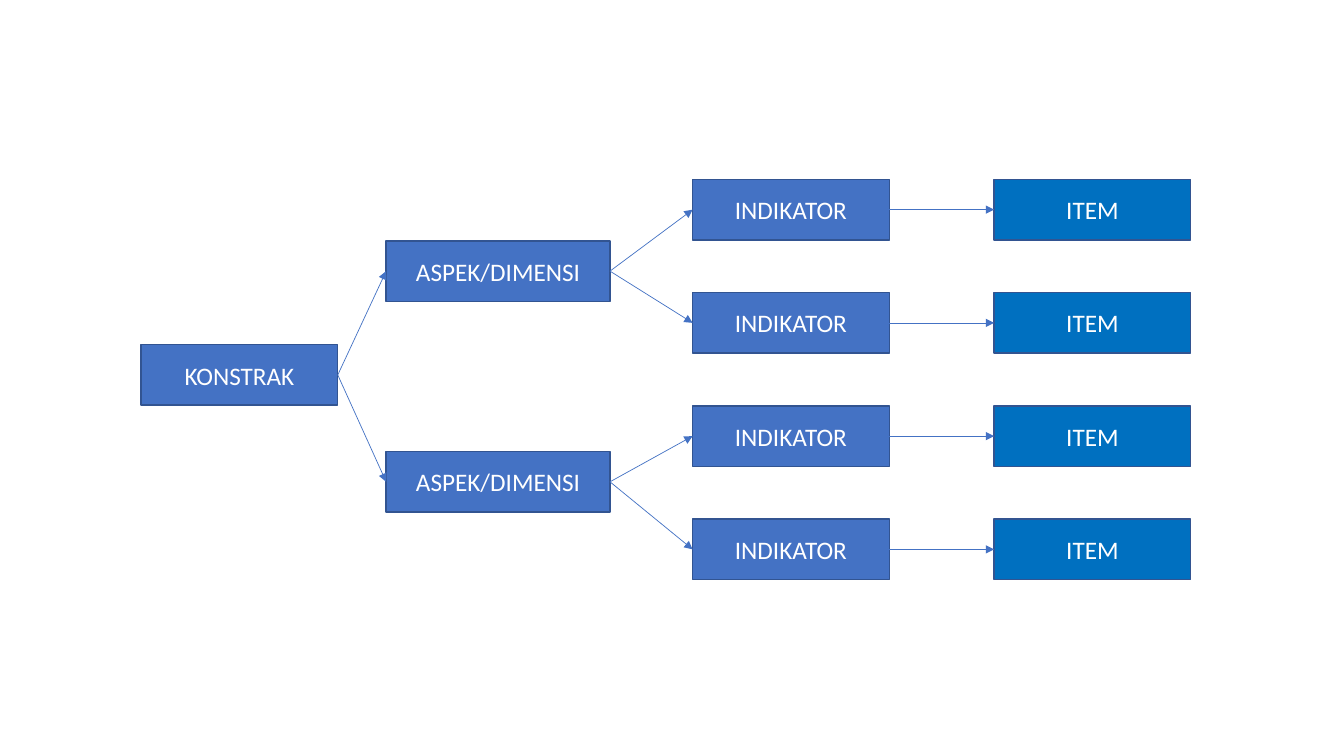
from dataclasses import dataclass

from lxml import etree
from pptx import Presentation
from pptx.dml.color import RGBColor
from pptx.enum import shapes, text
from pptx.oxml import ns
from pptx.util import Inches, Pt


@dataclass(frozen=True)
class Theme:
    font: str = "Calibri"
    size: float = 18
    fill: str = "4472C4"
    item_fill: str = "0070C0"
    outline: str = "325491"
    ink: str = "FFFFFF"
    arrow: str = "4472C4"
    outline_width: float = 1
    arrow_width: float = 0.5


THEME = Theme()
NODE_W, ASPECT_W, NODE_H = 1.95, 2.22, 0.6
LEFT_SITE, RIGHT_SITE = 1, 3


def add_text(sp, words, size=THEME.size, color=THEME.ink, font=THEME.font):
    tf = sp.text_frame
    tf.word_wrap = True
    tf.vertical_anchor = text.MSO_ANCHOR.MIDDLE
    p = tf.paragraphs[0]
    p.alignment = text.PP_ALIGN.CENTER
    r = p.add_run()
    r.text = words
    r.font.name = font
    r.font.size = Pt(size)
    r.font.color.rgb = RGBColor.from_string(color)


def add_node(s, words, x, y, w=NODE_W, fill=THEME.fill):
    sp = s.shapes.add_shape(shapes.MSO_SHAPE.RECTANGLE,
                            Inches(x), Inches(y), Inches(w), Inches(NODE_H))
    sp.shadow.inherit = False
    sp.fill.solid()
    sp.fill.fore_color.rgb = RGBColor.from_string(fill)
    sp.line.color.rgb = RGBColor.from_string(THEME.outline)
    sp.line.width = Pt(THEME.outline_width)
    add_text(sp, words)
    return sp


def add_arrow(s, start, end):
    """Glue an arrow from the right side of start to the left side of end."""
    c = s.shapes.add_connector(shapes.MSO_CONNECTOR.STRAIGHT, 0, 0, 0, 0)
    c.begin_connect(start, RIGHT_SITE)
    c.end_connect(end, LEFT_SITE)
    c.line.color.rgb = RGBColor.from_string(THEME.arrow)
    c.line.width = Pt(THEME.arrow_width)
    etree.SubElement(c.line._get_or_add_ln(), ns.qn("a:tailEnd"), type="triangle")
    etree.SubElement(c._element.spPr, ns.qn("a:effectLst"))


def add_construct_tree(s, x, y, w, h):
    # Columns and rows inside the box
    aspect_x, indicator_x, item_x = x + 2.43, x + 5.47, x + w - NODE_W
    row_step = (h - NODE_H) / 3
    rows = [y + i * row_step for i in range(4)]

    # Nodes, column by column
    construct = add_node(s, "KONSTRAK", x, y + 1.64)
    aspects = [add_node(s, "ASPEK/DIMENSI", aspect_x, y + dy, w=ASPECT_W)
               for dy in (0.61, 2.7)]
    indicators = [add_node(s, "INDIKATOR", indicator_x, row) for row in rows]
    items = [add_node(s, "ITEM", item_x, row, fill=THEME.item_fill) for row in rows]

    # Arrows: each aspect leads to two indicators, each indicator to one item
    for aspect in aspects:
        add_arrow(s, construct, aspect)
    for i, (indicator, item) in enumerate(zip(indicators, items)):
        add_arrow(s, aspects[i // 2], indicator)
        add_arrow(s, indicator, item)


def main():
    prs = Presentation()
    prs.slide_width, prs.slide_height = Inches(13.33), Inches(7.5)
    s = prs.slides.add_slide(prs.slide_layouts[6])
    add_construct_tree(s, x=1.4, y=1.78, w=10.41, h=3.97)
    prs.save("out.pptx")


if __name__ == "__main__":
    main()
